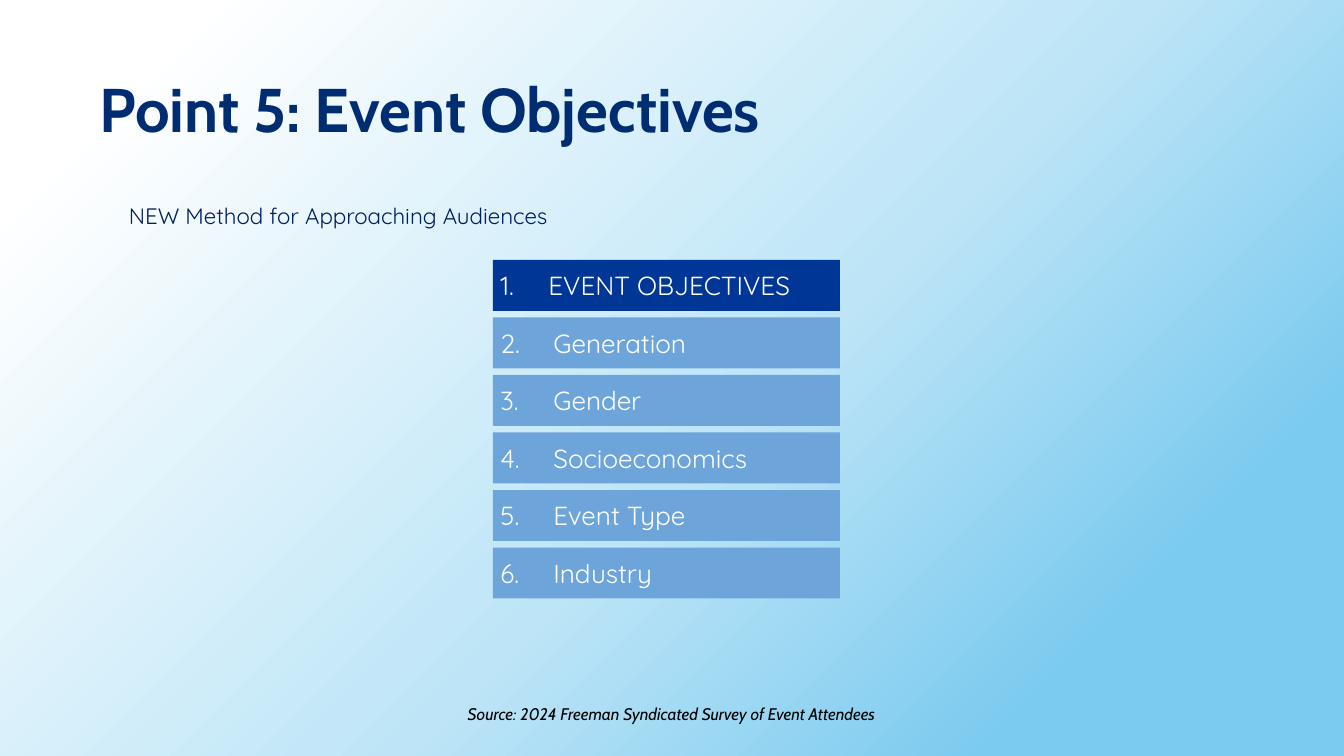
from pptx import Presentation
from pptx.dml.color import RGBColor
from pptx.enum.shapes import MSO_SHAPE
from pptx.enum.text import MSO_ANCHOR, PP_ALIGN
from pptx.oxml import parse_xml
from pptx.oxml.ns import nsdecls, qn
from pptx.util import Pt

RECT = MSO_SHAPE.RECTANGLE
MIDDLE = MSO_ANCHOR.MIDDLE
LEFT, CENTER = PP_ALIGN.LEFT, PP_ALIGN.CENTER
PX = 914400 / 75.6
STOPS = [(17, "7BCAEF"), (45, "BDE5F7"), (90, "FFFFFF")]
ITEMS = ["EVENT OBJECTIVES", "Generation", "Gender", "Socioeconomics", "Event Type", "Industry"]


def box(*px):
    return [round(v * PX) for v in px]


def write(p, text, size, font, color, align=LEFT):
    p.text = text
    p.alignment = align
    p.font.size = Pt(size)
    p.font.name = font
    p.font.color.rgb = RGBColor.from_string(color)


prs = Presentation()
prs.slide_width, prs.slide_height = box(1344, 756)
s = prs.slides.add_slide(prs.slide_layouts[6])

s.background.fill.gradient()
grad = next(s.element.iter(qn("a:gradFill")))
stops = "".join(
    f'<a:gs pos="{pos * 1000}"><a:srgbClr val="{color}"/></a:gs>' for pos, color in STOPS
)
grad.getparent().replace(grad, parse_xml(
    f'<a:gradFill {nsdecls("a")}><a:gsLst>{stops}</a:gsLst>'
    '<a:path path="circle"><a:fillToRect l="100000" t="100000"/></a:path></a:gradFill>'
))

tf = s.shapes.add_textbox(*box(92, 40, 1159, 146)).text_frame
tf.word_wrap = True
tf.vertical_anchor = MIDDLE
p = tf.paragraphs[0]
write(p, "Point 5: Event Objectives", 58.7, "Cabin", "002D72")
p.font.bold = True
p.line_spacing = 0.9

tf = s.shapes.add_textbox(*box(129, 203, 516, 26)).text_frame
tf.word_wrap = True
tf.vertical_anchor = MIDDLE
tf.margin_left = tf.margin_top = tf.margin_right = tf.margin_bottom = 0
p = tf.paragraphs[0]
write(p, "NEW Method for Approaching Audiences", 21.3, "Quicksand", "00205C")
p.space_after = Pt(6.7)

for i, item in enumerate(ITEMS):
    sp = s.shapes.add_shape(RECT, *box(493, 260 + 57.5 * i, 347, 51))
    sp.shadow.inherit = False
    sp.fill.solid()
    sp.fill.fore_color.rgb = RGBColor.from_string("6DA5DB" if i else "003696")
    sp.line.fill.background()
    tf = sp.text_frame
    tf.vertical_anchor = MIDDLE
    p = tf.paragraphs[0]
    tab = round((53 if i else 48) * PX)
    p._p.get_or_add_pPr().append(parse_xml(
        f'<a:tabLst {nsdecls("a")}><a:tab pos="{tab}" algn="l"/></a:tabLst>'
    ))
    write(p, f"{i + 1}.\t{item}", 24.9, "Quicksand", "FFFFFF")

tf = s.shapes.add_textbox(*box(445, 700, 453, 28)).text_frame
tf.word_wrap = False
p = tf.paragraphs[0]
write(p, "Source: 2024 Freeman Syndicated Survey of Event Attendees", 16, "Cabin", "000000", CENTER)
p.font.italic = True

prs.save("out.pptx")
